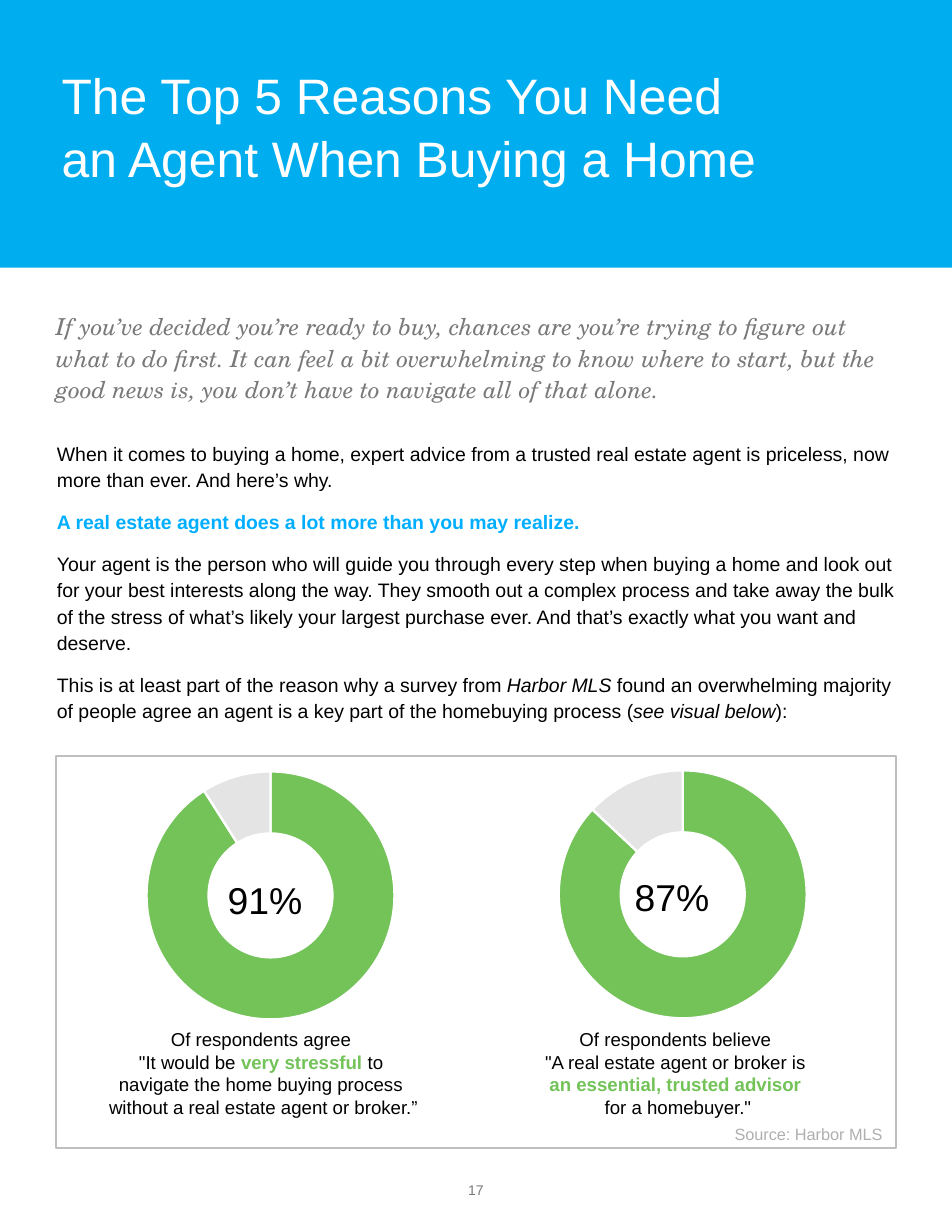
from pptx import Presentation
from pptx.chart.data import CategoryChartData
from pptx.dml.color import RGBColor
from pptx.enum.chart import XL_CHART_TYPE
from pptx.enum.shapes import MSO_SHAPE
from pptx.enum.text import MSO_ANCHOR, PP_ALIGN
from pptx.util import Pt

DONUT = XL_CHART_TYPE.DOUGHNUT
RECT = MSO_SHAPE.RECTANGLE
TOP, MIDDLE = MSO_ANCHOR.TOP, MSO_ANCHOR.MIDDLE
LEFT, CENTER, RIGHT = PP_ALIGN.LEFT, PP_ALIGN.CENTER, PP_ALIGN.RIGHT
SANS, SERIF = "Arial", "TeX Gyre Schola"
BAND, BLUE, GREEN, PALE = "00AEEF", "00AEFF", "73C359", "E4E4E4"
BLACK, WHITE, GREY, LIGHT, EDGE = "000000", "FFFFFF", "797979", "AFAFAF", "BFBFBF"

INTRO = ("If you’ve decided you’re ready to buy, chances are you’re trying to figure out "
         "what to do first. It can feel a bit overwhelming to know where to start, but the "
         "good news is, you don’t have to navigate all of that alone.")
BODY = [
    ["When it comes to buying a home, expert advice from a trusted real estate agent "
     "is priceless, now more than ever. And here’s why."],
    [("A real estate agent does a lot more than you may realize.",
      {"bold": True, "color": BLUE})],
    ["Your agent is the person who will guide you through every step when buying a home "
     "and look out for your best interests along the way. They smooth out a complex "
     "process and take away the bulk of the stress of what’s likely your largest purchase "
     "ever. And that’s exactly what you want and deserve."],
    ["This is at least part of the reason why a survey from ",
     ("Harbor MLS ", {"italic": True}),
     "found an overwhelming majority of people agree an agent is a key part of the "
     "homebuying process (",
     ("see visual below", {"italic": True}), "):"],
]
STRONG = {"bold": True, "color": GREEN}
STATS = [
    (91, (14.4, 0), (120, 92), (10, 247),
     ["Of respondents agree \n\"It would be ", ("very stressful ", STRONG),
      "to \nnavigate the home buying process \nwithout a real estate agent or broker.”"]),
    (87, (279.4, -0.7), (116.6, 91), (302.4, 195),
     ["Of respondents believe \n\"A real estate agent or broker is \n",
      ("an essential, trusted advisor ", STRONG), "\nfor a homebuyer.\""]),
]


def rgb(code):
    """Turn a hex string into a colour."""
    return RGBColor.from_string(code)


def style(font, size=None, color=None, name=None, bold=None, italic=None):
    """Set the given traits of a font."""
    if size:
        font.size = Pt(size)
    if color:
        font.color.rgb = rgb(color)
    if name:
        font.name = name
    if bold is not None:
        font.bold = bold
    if italic is not None:
        font.italic = italic


def fill_text(frame, paras, size, color, name=SANS, italic=None, align=LEFT,
              anchor=TOP, line=None, after=0, inset=(7.2, 3.6, 7.2, 3.6)):
    """Write paragraphs made of plain or styled parts into a frame."""
    frame.word_wrap = True
    frame.vertical_anchor = anchor
    (frame.margin_left, frame.margin_top,
     frame.margin_right, frame.margin_bottom) = map(Pt, inset)
    for index, parts in enumerate(paras):
        para = frame.add_paragraph() if index else frame.paragraphs[0]
        para.alignment = align
        para.space_before, para.space_after = Pt(0), Pt(after)
        if line:
            para.line_spacing = line
        style(para.font, size, color, name, italic=italic)
        for part in parts:
            words, look = (part, {}) if isinstance(part, str) else part
            for row, piece in enumerate(words.split("\n")):
                if row:
                    para.add_line_break()
                if piece:
                    run = para.add_run()
                    run.text = piece
                    style(run.font, **look)


def add_text(slide, box, paras, size, color, **rest):
    """Add a text box."""
    shape = slide.shapes.add_textbox(*map(Pt, box))
    fill_text(shape.text_frame, paras, size, color, **rest)


def add_header(slide, box):
    """Turn the title into a full-width colour band."""
    title = slide.shapes.title
    title.left, title.top, title.width, title.height = map(Pt, box)
    title.fill.solid()
    title.fill.fore_color.rgb = rgb(BAND)
    fill_text(title.text_frame, [["The Top 5 Reasons You Need\nan Agent When Buying a Home"]],
              32, WHITE, line=1.05, inset=(39.6, 40, 39.6, 0))


def add_story(slide, box):
    """Place the intro and the body text."""
    x, y, w, h = box
    add_text(slide, (x, y, w, 99), [[INTRO]], 15, GREY, name=SERIF, italic=True,
             line=1.14, inset=(0, 25.2, 0, 0))
    add_text(slide, (x - 6.5, y + 105.8, w + 15, h - 105.8), BODY, 12.5, BLACK,
             line=1.13, after=10)


def add_donut(slide, box, share):
    """Draw a ring that shows a share of 100."""
    data = CategoryChartData()
    data.categories = ["1", "2"]
    data.add_series("Series 1", (share, 100 - share))
    chart = slide.shapes.add_chart(DONUT, *map(Pt, box), data).chart
    chart.has_legend = chart.has_title = False
    style(chart.font, 10, BLACK, SANS)
    for index, color in enumerate((GREEN, PALE)):
        part = chart.plots[0].series[0].points[index].format
        part.fill.solid()
        part.fill.fore_color.rgb = rgb(color)
        part.line.color.rgb = rgb(WHITE)
        part.line.width = Pt(1.5)


def add_panel(slide, box):
    """Frame the two rings with their captions and source."""
    x, y, w, h = box
    frame = slide.shapes.add_shape(RECT, *map(Pt, box))
    frame.shadow.inherit = False
    frame.fill.background()
    frame.line.color.rgb = rgb(EDGE)
    frame.line.width = Pt(1)
    for share, (dx, dy), (mx, my), (cx, cw), words in STATS:
        left, top = x + dx, y + dy
        add_donut(slide, (left, top, 247, 179.3), share)
        add_text(slide, (left + mx - 53, top + my - 18, 106, 36), [[f"{share}%"]],
                 24, BLACK, align=CENTER, anchor=MIDDLE)
        add_text(slide, (x + cx, y + 171.4, cw, 65.5), [words], 12, BLACK, align=CENTER)
    add_text(slide, (x + w - 200, y + h - 17.3, 198.5, 11), [["Source: Harbor MLS"]],
             10.5, LIGHT, align=RIGHT, line=0.9)


def main():
    """Build the page."""
    deck = Presentation()
    deck.slide_width, deck.slide_height = Pt(612), Pt(792)
    slide = deck.slides.add_slide(deck.slide_layouts[5])
    add_header(slide, (0, 0, 612, 172))
    add_story(slide, (36, 172.8, 540, 323))
    add_panel(slide, (36, 486, 540, 252))
    add_text(slide, (271, 738, 70, 54), [["17"]], 9, GREY, align=CENTER, anchor=MIDDLE)
    deck.save("out.pptx")


if __name__ == "__main__":
    main()
